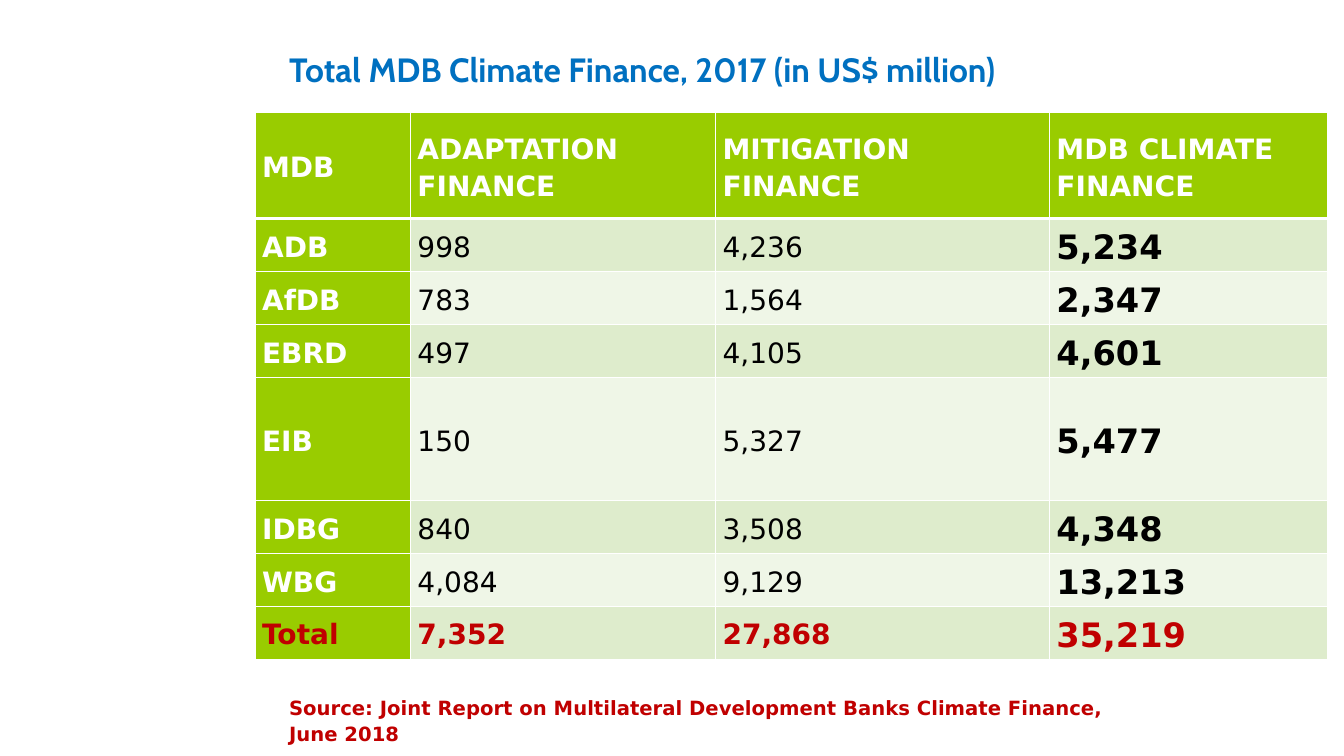
"""Build a slide with a table of climate finance by development bank."""
from dataclasses import dataclass

from lxml import etree
from pptx import Presentation
from pptx.dml.color import RGBColor
from pptx.enum.text import MSO_ANCHOR
from pptx.oxml.ns import qn
from pptx.util import Pt

MIDDLE = MSO_ANCHOR.MIDDLE


@dataclass(frozen=True)
class Theme:
    """Hold the colours, fonts and type sizes of the slide."""

    blue: str = "0070C0"
    red: str = "C00000"
    green: str = "99CC00"
    bands: tuple = ("DEECCC", "EFF6E7")
    white: str = "FFFFFF"
    black: str = "000000"
    title_font: str = "Cabin"
    body_font: str = "DejaVu Sans"
    title_size: int = 24
    cell_size: int = 20
    sum_size: int = 24
    source_size: int = 14


THEME = Theme()
COLUMN_WIDTHS = (111, 218, 238.5, 198.5)
HEADER_HEIGHT = 75.6
ROW_HEIGHT = 37.8
TALL_ROW_HEIGHT = 88
TALL_ROW = "EIB"
TOTAL_ROW = "Total"
FINANCE = (
    ("MDB", "ADAPTATION FINANCE", "MITIGATION FINANCE", "MDB CLIMATE FINANCE"),
    ("ADB", "998", "4,236", "5,234"),
    ("AfDB", "783", "1,564", "2,347"),
    ("EBRD", "497", "4,105", "4,601"),
    ("EIB", "150", "5,327", "5,477"),
    ("IDBG", "840", "3,508", "4,348"),
    ("WBG", "4,084", "9,129", "13,213"),
    ("Total", "7,352", "27,868", "35,219"),
)


def set_format(target, values):
    """Set each attribute of a dict on the target."""
    for name, value in values.items():
        setattr(target, name, value)


def write_text(frame, text, font, size, color, bold, spacing):
    """Write one formatted paragraph into a text frame."""
    para = frame.paragraphs[0]
    set_format(para, spacing)
    span = para.add_run()
    span.text = text
    set_format(span.font, {"name": font, "size": Pt(size), "bold": bold})
    span.font.color.rgb = RGBColor.from_string(color)


def add_caption(page, top, height, text, font, size, color):
    """Add a bold caption aligned with the other captions."""
    box = page.shapes.add_textbox(Pt(199.4), Pt(top), Pt(628.6), Pt(height))
    box.text_frame.word_wrap = True
    spacing = {"line_spacing": 1.1, "space_after": Pt(6)}
    write_text(box.text_frame, text, font, size, color, True, spacing)


def add_borders(cell, widths):
    """Draw white borders with the given width for each side."""
    properties = cell._tc.get_or_add_tcPr()
    for side, width in widths.items():
        line = etree.SubElement(properties, qn(f"a:{side}"), w=str(Pt(width)))
        fill = etree.SubElement(line, qn("a:solidFill"))
        etree.SubElement(fill, qn("a:srgbClr"), val=THEME.white)


def cell_style(row, column):
    """Return the fill, text colour, size and weight of a cell."""
    is_label = row == 0 or column == 0
    is_total = FINANCE[row][0] == TOTAL_ROW
    is_sum = row > 0 and column == len(COLUMN_WIDTHS) - 1
    fill = THEME.green if is_label else THEME.bands[(row - 1) % 2]
    color = THEME.white if is_label else THEME.black
    if is_total:
        color = THEME.red
    size = THEME.sum_size if is_sum else THEME.cell_size
    return fill, color, size, is_label or is_total or is_sum


def fill_cell(cell, row, column):
    """Style one table cell and write its text."""
    fill, color, size, bold = cell_style(row, column)
    margins = {"margin_left": Pt(5), "margin_right": Pt(5), "margin_top": 0, "margin_bottom": 0}
    set_format(cell, {"vertical_anchor": MIDDLE, **margins})
    top = 3 if row == 1 else 1
    bottom = 3 if row == 0 else 1
    add_borders(cell, {"lnL": 1, "lnR": 1, "lnT": top, "lnB": bottom})
    cell.fill.solid()
    cell.fill.fore_color.rgb = RGBColor.from_string(fill)
    spacing = {"line_spacing": 1.15, "space_after": Pt(10)}
    write_text(cell.text_frame, FINANCE[row][column], THEME.body_font, size, color, bold, spacing)


def add_finance_table(page):
    """Add the table of finance by bank."""
    heights = [HEADER_HEIGHT] + [
        TALL_ROW_HEIGHT if record[0] == TALL_ROW else ROW_HEIGHT for record in FINANCE[1:]
    ]
    frame = page.shapes.add_table(
        len(FINANCE), len(COLUMN_WIDTHS), Pt(182.2), Pt(80.6),
        Pt(sum(COLUMN_WIDTHS)), Pt(sum(heights)),
    )
    table = frame.table
    table.first_column = True
    for column, width in zip(table.columns, COLUMN_WIDTHS):
        column.width = Pt(width)
    for row, height in enumerate(heights):
        table.rows[row].height = Pt(height)
        for column in range(len(COLUMN_WIDTHS)):
            fill_cell(table.cell(row, column), row, column)


def main():
    """Build and save the slide."""
    deck = Presentation()
    set_format(deck, {"slide_width": Pt(960), "slide_height": Pt(540)})
    page = deck.slides.add_slide(deck.slide_layouts[6])
    add_caption(page, 28.8, 42, "Total MDB Climate Finance, 2017 (in US$ million)",
                THEME.title_font, THEME.title_size, THEME.blue)
    add_finance_table(page)
    add_caption(page, 492, 43,
                "Source: Joint Report on Multilateral Development Banks Climate Finance, June 2018",
                THEME.body_font, THEME.source_size, THEME.red)
    deck.save("out.pptx")


if __name__ == "__main__":
    main()
